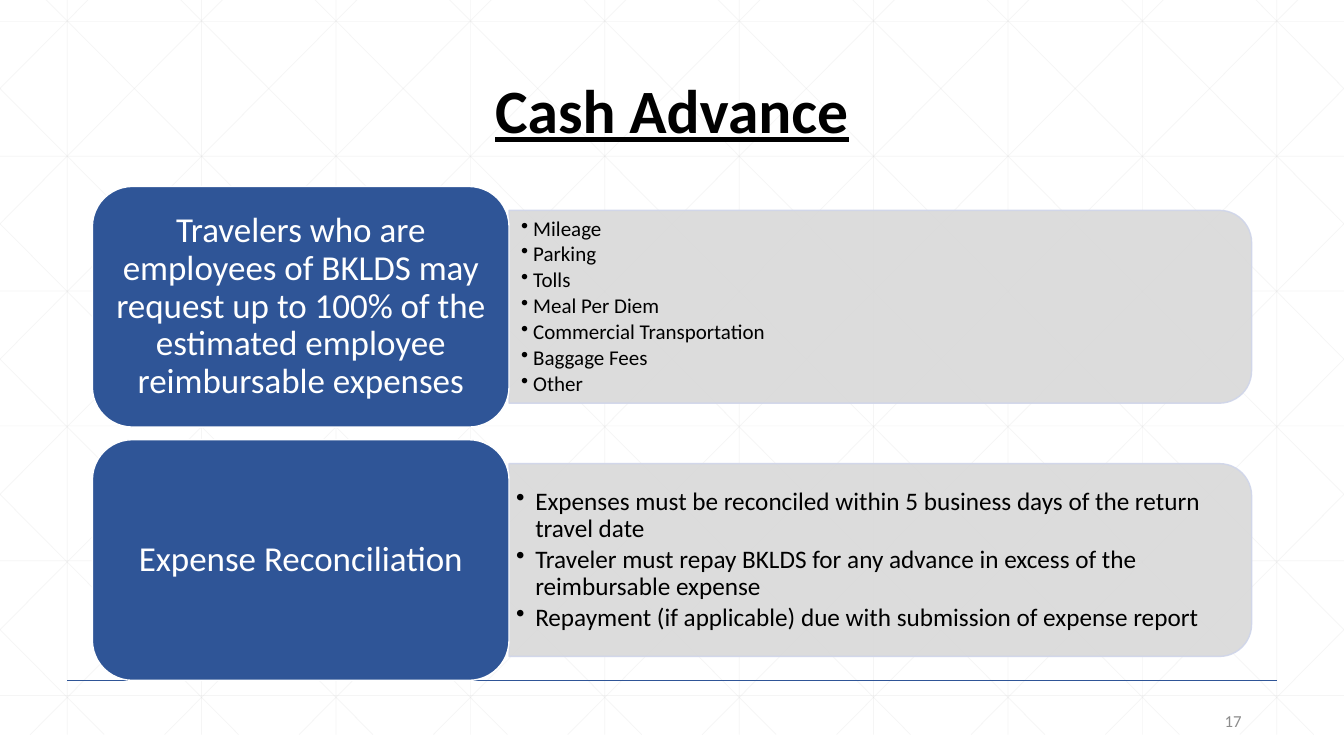
from dataclasses import dataclass

from lxml.etree import SubElement
from pptx import Presentation
from pptx.dml.color import RGBColor
from pptx.enum.shapes import MSO_CONNECTOR as Connector, MSO_SHAPE as Shape
from pptx.enum.text import MSO_ANCHOR as Anchor, PP_ALIGN as Align
from pptx.oxml.ns import qn
from pptx.util import Inches, Pt


@dataclass(frozen=True)
class Theme:
    font: str = "Calibri"
    black: str = "000000"
    white: str = "FFFFFF"
    blue: str = "2F5597"
    gray: str = "D9D9D9"
    edge: str = "CFD5EA"
    muted: str = "8C8C8C"
    title: int = 44
    label: int = 25
    number: int = 12


theme = Theme()
presentation = Presentation()
presentation.slide_width = Inches(40 / 3)
presentation.slide_height = Inches(7.5)
slide = presentation.slides.add_slide(presentation.slide_layouts[6])

COLUMNS, ROWS = 800, 600
column = presentation.slide_width / COLUMNS
row = presentation.slide_height / ROWS


def add_line(start, end, color, points, opacity=100):
    ends = [round(value * unit) for value, unit in zip((*start, *end), (column, row) * 2)]
    line = slide.shapes.add_connector(Connector.STRAIGHT, *ends)
    line.line.color.rgb = RGBColor.from_string(color)
    line.line.width = Pt(points)
    properties = line._element.spPr
    SubElement(properties, qn("a:effectLst"))
    if opacity < 100:
        SubElement(properties.find(".//" + qn("a:srgbClr")), qn("a:alpha"), val=str(opacity * 1000))


def add_text(left, top, width, height, lines, size, color, align, spacing=0.9,
             after=0, insets=(0.1, 0.05), indent=0, bold=None):
    box = slide.shapes.add_textbox(*(round(value) for value in
                                     (left * column, top * row, width * column, height * row)))
    frame = box.text_frame
    frame.word_wrap = True
    frame.vertical_anchor = Anchor.MIDDLE
    frame.margin_left = frame.margin_right = Inches(insets[0])
    frame.margin_top = frame.margin_bottom = Inches(insets[1])
    for position, line in enumerate(lines):
        paragraph = frame.add_paragraph() if position else frame.paragraphs[0]
        paragraph.alignment = align
        paragraph.line_spacing = spacing
        paragraph.space_after = Pt(size * after)
        if indent:
            properties = paragraph._p.get_or_add_pPr()
            properties.set("marL", str(Inches(indent)))
            properties.set("indent", str(-Inches(indent)))
            SubElement(properties, qn("a:buChar"), char="•")
        run = paragraph.add_run()
        run.text = line
        run.font.name = theme.font
        run.font.size = Pt(size)
        run.font.bold = run.font.underline = bold
        run.font.color.rgb = RGBColor.from_string(color)


grid_top, grid_bottom, pitch = -17, 583, 80
pattern = [((x, grid_top), (x, grid_bottom)) for x in range(40, COLUMNS, pitch)]
pattern += [((0, y), (COLUMNS, y)) for y in range(17, ROWS, 107)]
slope = (grid_bottom - grid_top) / 447
for step in range(-5, 10):
    top_x = 15 + pitch * step
    left_x, right_x = max(0, top_x), min(COLUMNS, top_x + 447)
    left_y, right_y = (grid_top + (x - top_x) * slope for x in (left_x, right_x))
    pattern.append(((left_x, left_y), (right_x, right_y)))
    pattern.append(((COLUMNS - left_x, left_y), (COLUMNS - right_x, right_y)))
for start, end in pattern:
    add_line(start, end, theme.gray, 0.5, 25)
add_line((40, 540), (760, 540), theme.blue, 1)

add_text(55, 32, 690, 116, ["Cash Advance"], theme.title, theme.black, Align.CENTER, bold=True)

sections = [
    ("Travelers who are employees of BKLDS may request up to 100% of the estimated employee "
     "reimbursable expenses",
     ["Mileage", "Parking", "Tolls", "Meal Per Diem", "Commercial Transportation",
      "Baggage Fees", "Other"],
     15, (0.12, 0.06), 0.12),
    ("Expense Reconciliation",
     ["Expenses must be reconciled within 5 business days of the return travel date",
      "Traveler must repay BKLDS for any advance in excess of the reimbursable expense",
      "Repayment (if applicable) due with submission of expense report"],
     18, (0.07, 0.04), 0.19),
]
label_left, label_width, label_height = 55, 248, 191
panel_left, panel_width, panel_height = label_left + label_width, 442, 153

for index, (label, details, size, insets, indent) in enumerate(sections):
    top = 148 + 201 * index
    long_side, short_side = panel_width * column, panel_height * row
    center_x = (panel_left + panel_width / 2) * column
    center_y = (top + label_height / 2) * row
    panel = slide.shapes.add_shape(
        Shape.ROUND_2_SAME_RECTANGLE, round(center_x - short_side / 2),
        round(center_y - long_side / 2), round(short_side), round(long_side))
    panel.rotation = 90
    card = slide.shapes.add_shape(
        Shape.ROUNDED_RECTANGLE, round(label_left * column), round(top * row),
        round(label_width * column), round(label_height * row))
    for shape, fill, edge in ((panel, theme.gray, theme.edge), (card, theme.blue, theme.white)):
        shape.shadow.inherit = False
        shape.fill.solid()
        shape.fill.fore_color.rgb = RGBColor.from_string(fill)
        shape.line.color.rgb = RGBColor.from_string(edge)
        shape.line.width = Pt(1)
    for color in panel._element.spPr.iter(qn("a:srgbClr")):
        SubElement(color, qn("a:alpha"), val="90000")
    add_text(panel_left, top + 26, 436, 139, details, size, theme.black, Align.LEFT,
             after=0.15, insets=insets, indent=indent)
    add_text(label_left + 7, top + 9, label_width - 14, label_height - 18, [label],
             theme.label, theme.white, Align.CENTER, after=0.35)

add_text(565, 556, 180, 32, ["17"], theme.number, theme.muted, Align.RIGHT, spacing=1.0)

presentation.save("out.pptx")
